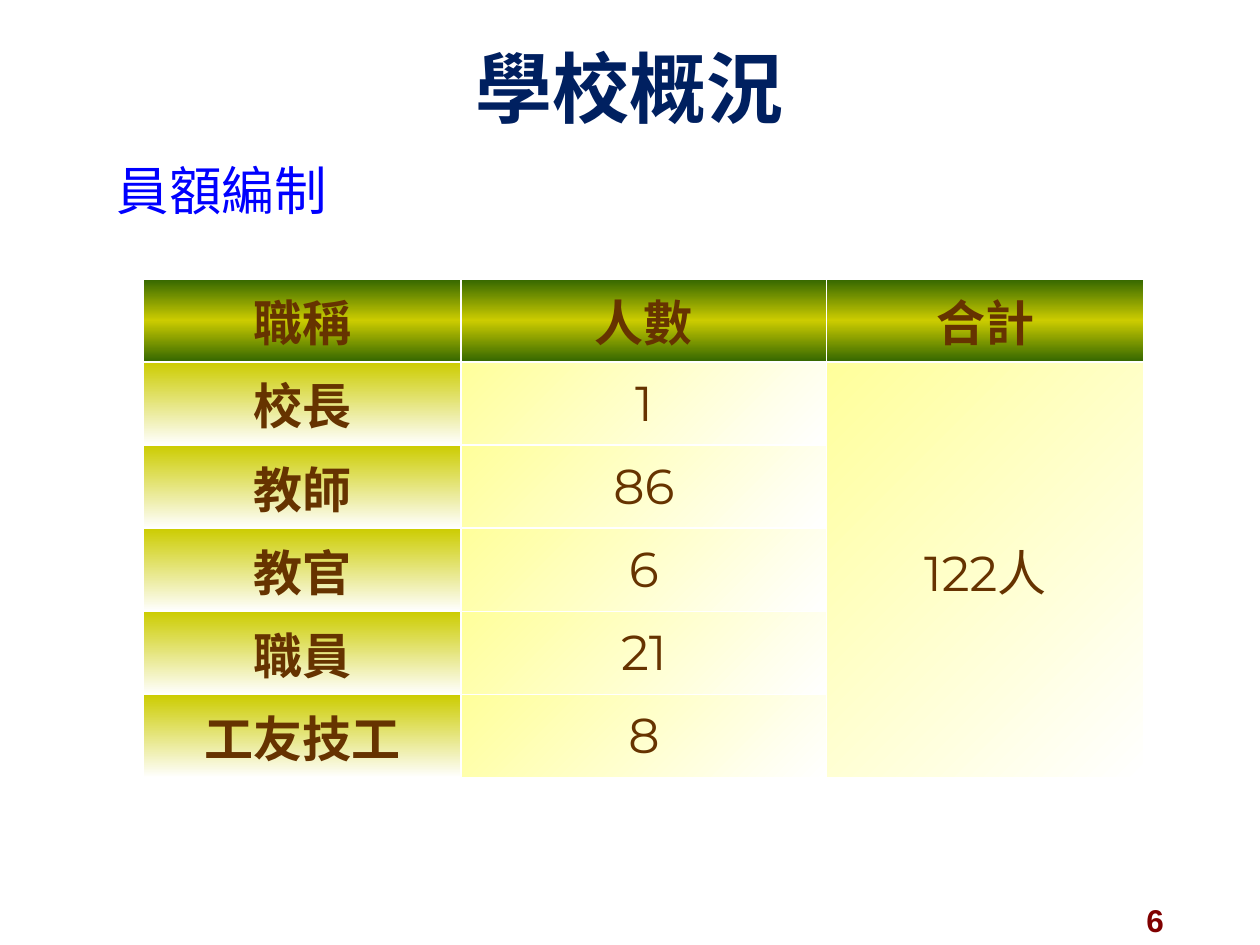
from pptx import Presentation
from pptx.dml.color import RGBColor
from pptx.enum.text import MSO_ANCHOR as ANCHOR, PP_ALIGN as ALIGN
from pptx.oxml import parse_xml
from pptx.oxml.ns import nsdecls
from pptx.util import Inches, Pt

W, H = 10, 7.5
CJK = "Noto Sans CJK SC"
COLS = [2.52, 2.9, 2.52]
ROW_H = 0.66
HEADER = ["職稱", "人數", "合計"]
STAFF = [("校長", "1"), ("教師", "86"), ("教官", "6"), ("職員", "21"), ("工友技工", "8")]
TOTAL = "122人"
HEAD_FILL = ([(0, "336600"), (50, "CCCC00"), (100, "336600")], 90)
LABEL_FILL = ([(0, "CCCC00"), (100, "FFFFFF")], 90)
VALUE_FILL = ([(0, "FFFF9B"), (100, "FFFFFF")], 45)


def rgb(value):
    """Turn a hex string into a colour."""
    return RGBColor.from_string(value)


def write(tf, text, fmt, color, align=ALIGN.LEFT, ea=CJK):
    """Put one formatted run into a text frame."""
    p = tf.paragraphs[0]
    p.alignment = align
    r = p.add_run()
    r.text = text
    for key, value in fmt.items():
        setattr(r.font, key, value)
    r.font.color.rgb = rgb(color)
    r.font._element.append(parse_xml(f'<a:ea {nsdecls("a")} typeface="{ea}"/>'))
    return p


def add_text(s, box, text, fmt, color, align=ALIGN.LEFT, anchor=ANCHOR.TOP):
    """Add a text box placed by shares of the slide size."""
    x, y, w, h = box
    sp = s.shapes.add_textbox(Inches(x * W), Inches(y * H), Inches(w * W), Inches(h * H))
    tf = sp.text_frame
    tf.word_wrap = True
    tf.vertical_anchor = anchor
    return write(tf, text, fmt, color, align)


def style_cell(cell, stops, angle):
    """Give a cell white borders and a linear gradient."""
    tc_pr = cell._tc.get_or_add_tcPr()
    for side in "LRTB":
        tc_pr.append(parse_xml(
            f'<a:ln{side} {nsdecls("a")} w="{Pt(1)}"><a:solidFill>'
            f'<a:srgbClr val="FFFFFF"/></a:solidFill></a:ln{side}>'))
    marks = "".join(f'<a:gs pos="{pos * 1000}"><a:srgbClr val="{color}"/></a:gs>'
                    for pos, color in stops)
    tc_pr.append(parse_xml(
        f'<a:gradFill {nsdecls("a")} rotWithShape="1"><a:gsLst>{marks}</a:gsLst>'
        f'<a:lin ang="{angle * 60000}" scaled="1"/></a:gradFill>'))


def fill_cell(cell, text, fill, bold):
    """Style a cell and write its centred text."""
    style_cell(cell, *fill)
    cell.vertical_anchor = ANCHOR.MIDDLE
    if text:
        fmt = {"name": "Montserrat", "size": Pt(28), "bold": bold}
        write(cell.text_frame, text, fmt, "663300", ALIGN.CENTER)


def add_staff_table(s, x, y):
    """Add the staff table with the total merged over all staff rows."""
    rows = len(STAFF) + 1
    table = s.shapes.add_table(rows, len(COLS), Inches(x * W), Inches(y * H),
                               Inches(sum(COLS)), Inches(rows * ROW_H)).table
    table.horz_banding = False
    for col, width in zip(table.columns, COLS):
        col.width = Inches(width)
    for row in table.rows:
        row.height = Inches(ROW_H)
    table.cell(1, 2).merge(table.cell(rows - 1, 2))
    for j, text in enumerate(HEADER):
        fill_cell(table.cell(0, j), text, HEAD_FILL, True)
    for i, (title, count) in enumerate(STAFF, 1):
        fill_cell(table.cell(i, 0), title, LABEL_FILL, True)
        fill_cell(table.cell(i, 1), count, VALUE_FILL, False)
        fill_cell(table.cell(i, 2), TOTAL if i == 1 else "", VALUE_FILL, False)


def main():
    """Build the staffing slide and save it."""
    prs = Presentation()
    prs.slide_width, prs.slide_height = Inches(W), Inches(H)
    s = prs.slides.add_slide(prs.slide_layouts[6])
    add_text(s, (0.9, 0.947, 0.07, 0.053), "6",
             {"name": "Arial", "size": Pt(18), "bold": True}, "800000")
    add_text(s, (0, 0.048, 1, 0.087), "學校概況",
             {"name": CJK, "size": Pt(44), "bold": True}, "002060",
             ALIGN.CENTER, ANCHOR.MIDDLE)
    add_staff_table(s, 0.114, 0.295)
    p = add_text(s, (0.083, 0.173, 0.205, 0.068), "員額編制",
                 {"name": CJK, "size": Pt(30)}, "0000FF")
    p.line_spacing = 0.8
    prs.save("out.pptx")


if __name__ == "__main__":
    main()
